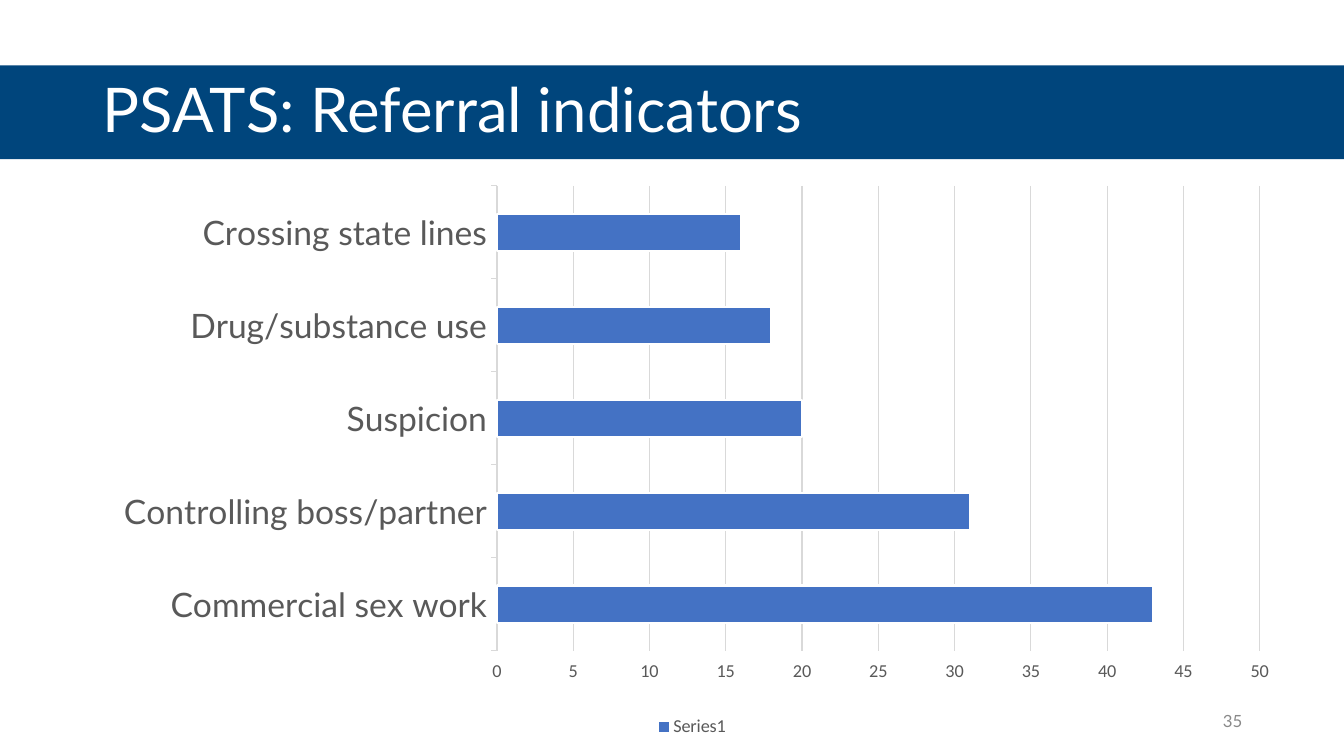
from lxml import etree
from pptx import Presentation
from pptx.chart.data import CategoryChartData
from pptx.dml.color import RGBColor
from pptx.enum.chart import XL_CHART_TYPE, XL_LEGEND_POSITION, XL_TICK_MARK
from pptx.enum.shapes import MSO_SHAPE
from pptx.enum.text import MSO_ANCHOR, MSO_AUTO_SIZE, PP_ALIGN
from pptx.oxml.ns import qn
from pptx.util import Inches, Pt

BAR_CLUSTERED = XL_CHART_TYPE.BAR_CLUSTERED
LEGEND_BOTTOM = XL_LEGEND_POSITION.BOTTOM
TICK_OUTSIDE = XL_TICK_MARK.OUTSIDE
RECTANGLE = MSO_SHAPE.RECTANGLE
MIDDLE = MSO_ANCHOR.MIDDLE
NO_AUTOFIT = MSO_AUTO_SIZE.NONE
LEFT, RIGHT = PP_ALIGN.LEFT, PP_ALIGN.RIGHT

WIDTH, HEIGHT = 13.33, 7.5
TITLE_ONLY = 5
COLORS = {
    "band": "00457C",
    "white": "FFFFFF",
    "number": "898989",
    "label": "595959",
    "grid": "D9D9D9",
    "bar": "4472C4",
}
HEADING_FONT, CHART_FONT = "Lato", "Calibri"
REFERRALS = {
    "Commercial sex work": 43,
    "Controlling boss/partner": 31,
    "Suspicion": 20,
    "Drug/substance use": 18,
    "Crossing state lines": 16,
}
PLOT_AREA = {"x": 0.026, "y": 0.07, "w": 0.955, "h": 0.831}


def color(name):
    return RGBColor.from_string(COLORS[name])


def style_font(font, name, size, color_name):
    font.name = name
    font.size = Pt(size)
    font.color.rgb = color(color_name)


def style_line(line, color_name, width):
    line.color.rgb = color(color_name)
    line.width = Pt(width)


def place_plot(chart, shares):
    """Fix the plot, axis labels included, at shares of the chart's size."""
    plot_area = chart.element.find(".//" + qn("c:plotArea"))
    for old_layout in plot_area.findall(qn("c:layout")):
        plot_area.remove(old_layout)
    layout = etree.Element(qn("c:layout"))
    manual = etree.SubElement(layout, qn("c:manualLayout"))
    settings = {"layoutTarget": "outer", "xMode": "edge", "yMode": "edge", **shares}
    for tag, value in settings.items():
        etree.SubElement(manual, qn(f"c:{tag}")).set("val", str(value))
    plot_area.insert(0, layout)


class SlideBuilder:
    """Adds styled elements to one slide; boxes are shares of its size."""

    def __init__(self, presentation):
        self.width = presentation.slide_width
        self.height = presentation.slide_height
        self.slide = presentation.slides.add_slide(presentation.slide_layouts[TITLE_ONLY])

    def box(self, left, top, width, height):
        return (int(left * self.width), int(top * self.height),
                int(width * self.width), int(height * self.height))

    def add_text(self, shape, text, size, color_name, alignment):
        frame = shape.text_frame
        frame.word_wrap = True
        frame.auto_size = NO_AUTOFIT
        frame.vertical_anchor = MIDDLE
        paragraph = frame.paragraphs[0]
        paragraph.alignment = alignment
        run = paragraph.add_run()
        run.text = text
        style_font(run.font, HEADING_FONT, size, color_name)
        return paragraph

    def band(self, *shares):
        """Add a full-colour band behind the title."""
        band = self.slide.shapes.add_shape(RECTANGLE, *self.box(*shares))
        band.shadow.inherit = False
        band.fill.solid()
        band.fill.fore_color.rgb = color("band")
        band.line.fill.background()
        self.slide.shapes.title.element.addprevious(band.element)

    def title(self, text, *shares):
        title = self.slide.shapes.title
        title.left, title.top, title.width, title.height = self.box(*shares)
        self.add_text(title, text, 44, "white", LEFT).line_spacing = 0.9

    def page_number(self, number, *shares):
        text_box = self.slide.shapes.add_textbox(*self.box(*shares))
        self.add_text(text_box, number, 12, "number", RIGHT)

    def bar_chart(self, series_name, values, *shares):
        data = CategoryChartData()
        data.categories = list(values)
        data.add_series(series_name, list(values.values()))
        chart = self.slide.shapes.add_chart(BAR_CLUSTERED, *self.box(*shares), data).chart
        chart.has_title = False
        style_font(chart.font, CHART_FONT, 13, "label")

        chart.has_legend = True
        chart.legend.position = LEGEND_BOTTOM
        chart.legend.include_in_layout = False
        style_font(chart.legend.font, CHART_FONT, 13, "label")

        plot = chart.plots[0]
        plot.gap_width = 150
        plot.vary_by_categories = False
        bars = plot.series[0].format
        bars.fill.solid()
        bars.fill.fore_color.rgb = color("bar")
        style_line(bars.line, "white", 1.5)

        category_axis, value_axis = chart.category_axis, chart.value_axis
        category_axis.major_tick_mark = TICK_OUTSIDE
        style_font(category_axis.tick_labels.font, HEADING_FONT, 24, "label")
        style_line(category_axis.format.line, "grid", 0.75)

        value_axis.minimum_scale, value_axis.maximum_scale = 0, 50
        value_axis.major_unit = 5
        value_axis.major_tick_mark = TICK_OUTSIDE
        value_axis.has_major_gridlines = True
        style_font(value_axis.tick_labels.font, CHART_FONT, 13, "label")
        style_line(value_axis.major_gridlines.format.line, "grid", 0.75)
        value_axis.format.line.fill.background()
        place_plot(chart, PLOT_AREA)


def main():
    presentation = Presentation()
    presentation.slide_width, presentation.slide_height = Inches(WIDTH), Inches(HEIGHT)
    builder = SlideBuilder(presentation)
    margin = 0.92 / WIDTH
    builder.band(0, 0.65 / HEIGHT, 1, 0.93 / HEIGHT)
    builder.title("PSATS: Referral indicators",
                  margin, 0.39 / HEIGHT, 11.5 / WIDTH, 1.45 / HEIGHT)
    builder.page_number("35", 9.42 / WIDTH, 6.95 / HEIGHT, 3 / WIDTH, 0.4 / HEIGHT)
    builder.bar_chart("Series1", REFERRALS,
                      margin, 1.43 / HEIGHT, 11.89 / WIDTH, 5.93 / HEIGHT)
    presentation.save("out.pptx")


if __name__ == "__main__":
    main()
